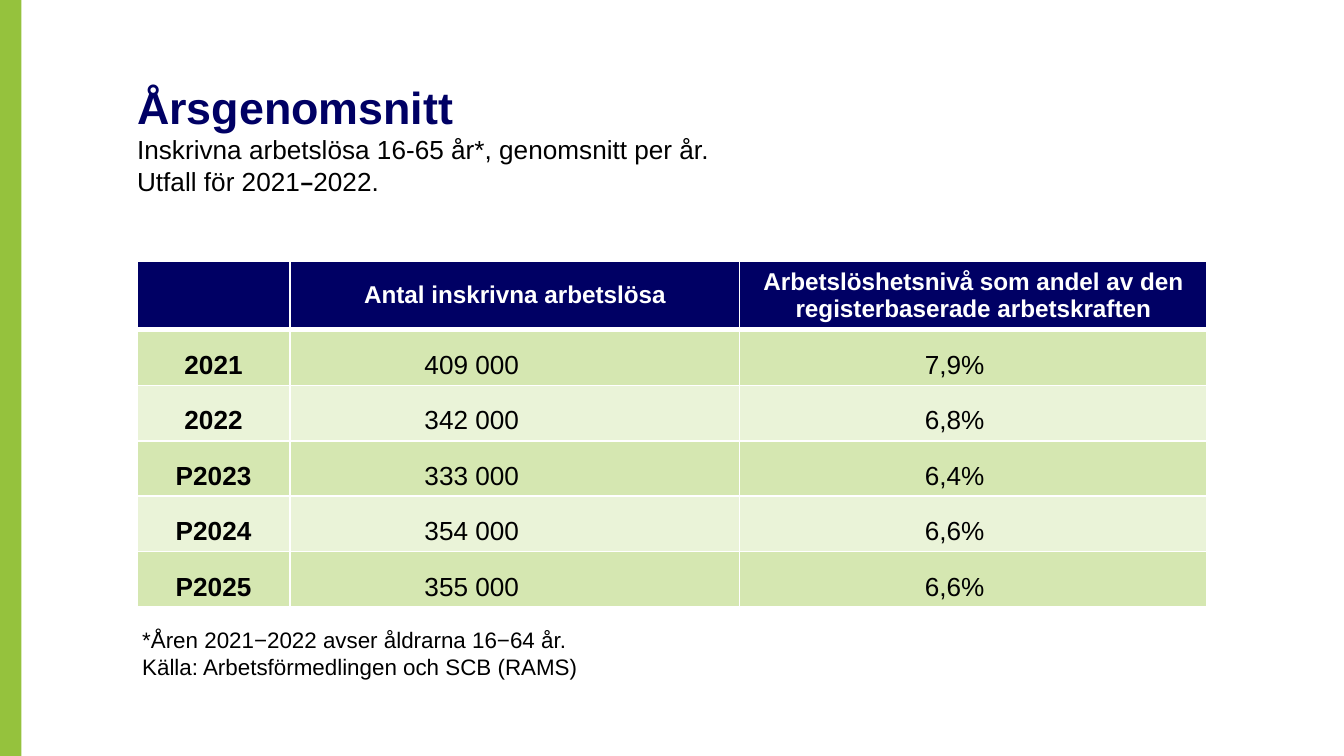
from lxml import etree
from pptx import Presentation
from pptx.dml.color import RGBColor
from pptx.enum.shapes import MSO_SHAPE
from pptx.enum.text import MSO_ANCHOR, PP_ALIGN
from pptx.oxml.ns import qn
from pptx.util import Inches, Pt

RECTANGLE = MSO_SHAPE.RECTANGLE
MIDDLE, BOTTOM = MSO_ANCHOR.MIDDLE, MSO_ANCHOR.BOTTOM
CENTER, LEFT = PP_ALIGN.CENTER, PP_ALIGN.LEFT

SLIDE_W, SLIDE_H = Inches(10), Inches(5.625)
COLORS = {
    "navy": "000064", "green": "95C23D", "band": "D5E7B1",
    "pale_band": "EAF3D8", "white": "FFFFFF", "black": "000000",
}

HEADINGS = ["", "Antal inskrivna arbetslösa",
            "Arbetslöshetsnivå som andel av den registerbaserade arbetskraften"]
YEARS = [
    ("2021", "409 000", "7,9%"),
    ("2022", "342 000", "6,8%"),
    ("P2023", "333 000", "6,4%"),
    ("P2024", "354 000", "6,6%"),
    ("P2025", "355 000", "6,6%"),
]
COLUMN_SHARES = [0.143, 0.42, 0.437]
HEADING_SHARE = 0.19

HEADING = {"size": 13, "bold": True, "color": "white"}
YEAR = {"size": 14, "bold": True}
FIGURE = {"size": 14}
# Column formats for the body: font, alignment, left margin, indent
COLUMN_FORMATS = [(YEAR, CENTER, 0.08, 0), (FIGURE, LEFT, 1, 0), (FIGURE, LEFT, 1, 0.38)]


def rgb(name):
    return RGBColor.from_string(COLORS[name])


def share_box(left, top, width, height):
    """Turn shares of the slide into a box of lengths."""
    return (int(left * SLIDE_W), int(top * SLIDE_H),
            int(width * SLIDE_W), int(height * SLIDE_H))


def add_run(paragraph, text, size, bold=False, color="black", name="Arial"):
    run = paragraph.add_run()
    run.text = text
    for key, value in {"size": Pt(size), "bold": bold, "name": name}.items():
        setattr(run.font, key, value)
    run.font.color.rgb = rgb(color)


def add_text(slide, box, lines, anchor, inset_x, inset_y):
    """Place lines of text, each a list of (text, format) runs."""
    frame = slide.shapes.add_textbox(*box).text_frame
    settings = {
        "word_wrap": True, "vertical_anchor": anchor,
        "margin_left": Inches(inset_x), "margin_right": Inches(inset_x),
        "margin_top": Inches(inset_y), "margin_bottom": Inches(inset_y),
    }
    for key, value in settings.items():
        setattr(frame, key, value)
    for number, runs in enumerate(lines):
        paragraph = frame.add_paragraph() if number else frame.paragraphs[0]
        for text, style in runs:
            add_run(paragraph, text, **style)


def add_side_band(slide, box):
    band = slide.shapes.add_shape(RECTANGLE, *box)
    band.shadow.inherit = False
    band.fill.solid()
    band.fill.fore_color.rgb = rgb("green")
    band.line.fill.background()


def add_title(slide, box):
    body = {"size": 14}
    dash = {"size": 14, "bold": True, "name": "Cambria"}
    add_text(slide, box, [
        [("Årsgenomsnitt", {"size": 24, "bold": True, "color": "navy"})],
        [("Inskrivna arbetslösa 16-65 år*, genomsnitt per år.", body)],
        [("Utfall för 2021", body), ("–", dash), ("2022.", body)],
    ], BOTTOM, 0, 0)


def set_borders(cell, widths):
    """Draw white cell borders; widths follow left, right, top, bottom."""
    properties = cell._tc.get_or_add_tcPr()
    for position, (side, width) in enumerate(zip("LRTB", widths)):
        line = etree.Element(qn(f"a:ln{side}"), w=str(Pt(width)))
        fill = etree.SubElement(line, qn("a:solidFill"))
        etree.SubElement(fill, qn("a:srgbClr"), val=COLORS["white"])
        properties.insert(position, line)


def fill_cell(cell, text, fill, font, align, anchor, margin, indent, widths):
    cell.fill.solid()
    cell.fill.fore_color.rgb = rgb(fill)
    settings = {
        "vertical_anchor": anchor,
        "margin_left": Inches(margin), "margin_right": Inches(0.08),
        "margin_top": Inches(0.04), "margin_bottom": Inches(0.04),
    }
    for key, value in settings.items():
        setattr(cell, key, value)
    set_borders(cell, widths)
    paragraph = cell.text_frame.paragraphs[0]
    paragraph.alignment = align
    if indent:
        paragraph._p.get_or_add_pPr().set("marL", str(Inches(indent)))
    if text:
        add_run(paragraph, text, **font)


def add_unemployment_table(slide, box):
    width, height = box[2:]
    table = slide.shapes.add_table(len(YEARS) + 1, len(HEADINGS), *box).table
    for column, share in zip(table.columns, COLUMN_SHARES):
        column.width = int(width * share)
    year_share = (1 - HEADING_SHARE) / len(YEARS)
    for number, row in enumerate(table.rows):
        row.height = int(height * (year_share if number else HEADING_SHARE))

    # Heading row
    for column, heading in enumerate(HEADINGS):
        fill_cell(table.cell(0, column), heading, "navy", HEADING,
                  CENTER, MIDDLE, 0.08, 0, (1, 1, 1, 3))

    # One banded row per year
    for row, values in enumerate(YEARS, start=1):
        fill = "band" if row % 2 else "pale_band"
        widths = (1, 1, 3 if row == 1 else 1, 1)
        for column, (text, style) in enumerate(zip(values, COLUMN_FORMATS)):
            font, align, margin, indent = style
            fill_cell(table.cell(row, column), text, fill, font,
                      align, BOTTOM, margin, indent, widths)


def add_source_note(slide, box):
    note = {"size": 12}
    add_text(slide, box, [
        [("*Åren 2021−2022 avser åldrarna 16−64 år.", note)],
        [("Källa: Arbetsförmedlingen och SCB (RAMS)", note)],
    ], MSO_ANCHOR.TOP, 0.1, 0.05)


def main():
    deck = Presentation()
    deck.slide_width, deck.slide_height = SLIDE_W, SLIDE_H
    slide = deck.slides.add_slide(deck.slide_layouts[6])
    add_side_band(slide, share_box(0, 0, 0.016, 1))
    add_title(slide, share_box(0.102, 0.128, 0.722, 0.132))
    add_unemployment_table(slide, share_box(0.102, 0.345, 0.796, 0.453))
    add_source_note(slide, share_box(0.096, 0.82, 0.696, 0.09))
    deck.save("out.pptx")


if __name__ == "__main__":
    main()
